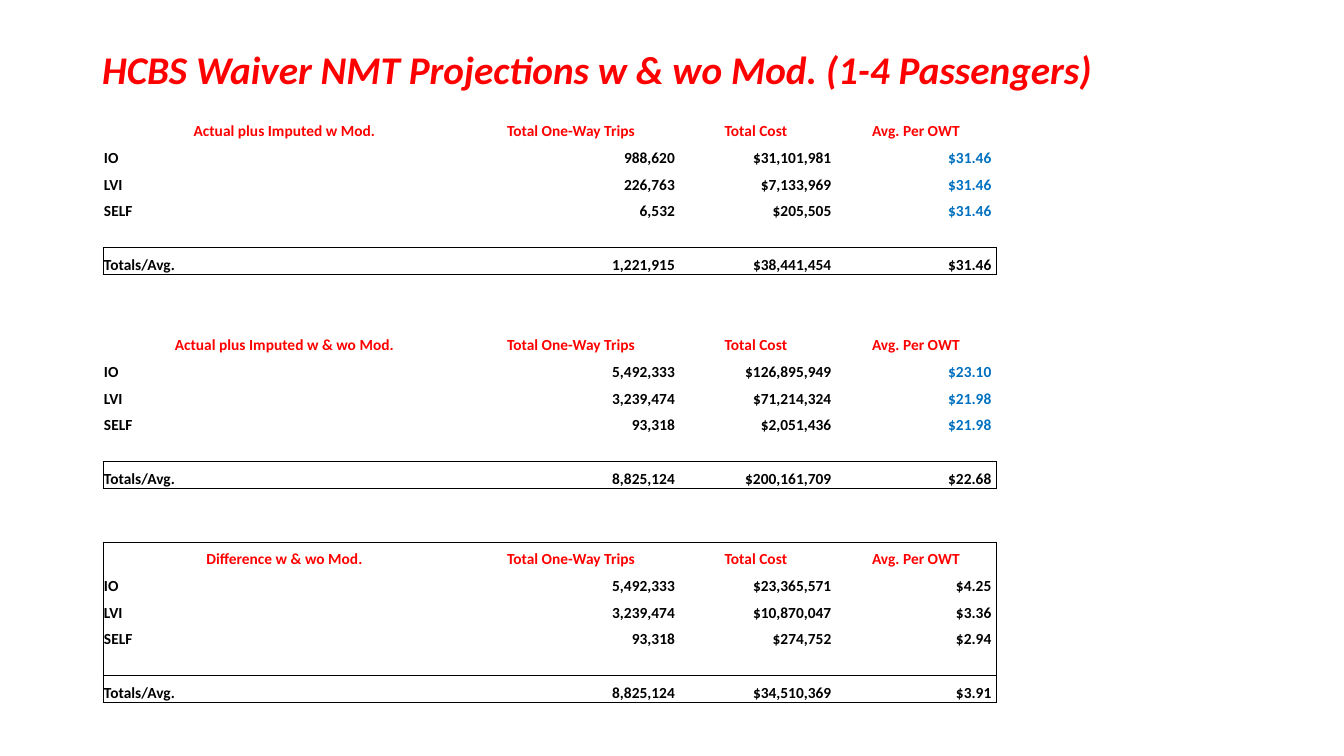
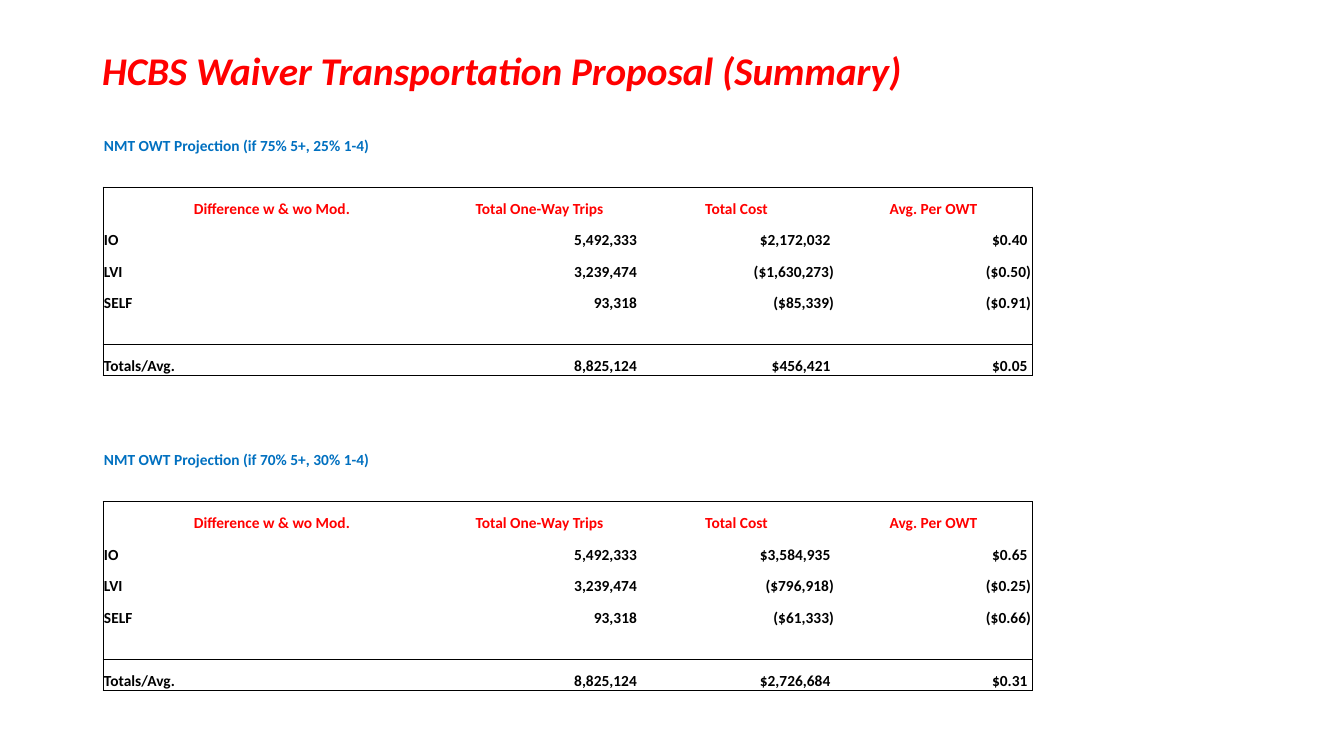
from dataclasses import dataclass

from lxml.etree import SubElement
from pptx import Presentation
from pptx.dml.color import RGBColor
from pptx.enum.text import MSO_ANCHOR as Anchor, MSO_AUTO_SIZE as AutoSize, PP_ALIGN as Align
from pptx.oxml.ns import qn
from pptx.util import Emu, Pt

# Scale and shared style
EMU_PER_INCH = 914400
PX_PER_INCH = 100.8
FONT = "Calibri"
RED = RGBColor(0xFF, 0x00, 0x00)
BLUE = RGBColor(0x00, 0x70, 0xC0)
BLACK = RGBColor(0x00, 0x00, 0x00)
TITLE_SIZE, CELL_SIZE = 28, 11
LEFT = 103
NO_GRID_STYLE = "{2D5ABB26-0587-4C30-8999-92F81FD0307C}"

COLUMN_HEADS = ("Total One-Way Trips", "Total Cost", "Avg. Per OWT")
ROW_LABELS = ("IO", "LVI", "SELF", None, "Totals/Avg.")
BLOCK_ROWS = 1 + len(ROW_LABELS)
GAP_ROWS = 2


@dataclass(frozen=True)
class Block:
    heading: str
    values: tuple  # (trips, cost, average) for each labelled row
    caption: str = ""
    boxed: bool = True
    rate_color: RGBColor = BLACK


@dataclass(frozen=True)
class Page:
    title: str
    title_height: int
    top: int
    height: int
    columns: tuple
    blocks: tuple
    lead_rows: int = 0  # caption rows above each block


DIFFERENCE = "Difference w & wo Mod."

PAGES = (
    Page("HCBS Waiver NMT Projections w & wo Mod. (1-4 Passengers)",
         64, 114, 589, (363, 210, 160, 160), (
             Block("Actual plus Imputed w Mod.", (
                 ("988,620", "$31,101,981 ", "$31.46 "),
                 ("226,763", "$7,133,969 ", "$31.46 "),
                 ("6,532", "$205,505 ", "$31.46 "),
                 ("1,221,915", "$38,441,454 ", "$31.46 ")),
                 boxed=False, rate_color=BLUE),
             Block("Actual plus Imputed w & wo Mod.", (
                 ("5,492,333", "$126,895,949 ", "$23.10 "),
                 ("3,239,474", "$71,214,324 ", "$21.98 "),
                 ("93,318", "$2,051,436 ", "$21.98 "),
                 ("8,825,124", "$200,161,709 ", "$22.68 ")),
                 boxed=False, rate_color=BLUE),
             Block(DIFFERENCE, (
                 ("5,492,333", "$23,365,571 ", "$4.25 "),
                 ("3,239,474", "$10,870,047 ", "$3.36 "),
                 ("93,318", "$274,752 ", "$2.94 "),
                 ("8,825,124", "$34,510,369 ", "$3.91 "))))),
    Page("HCBS Waiver Transportation Proposal (Summary)",
         65, 124, 567, (338, 197, 197, 197), (
             Block(DIFFERENCE, (
                 ("5,492,333", "$2,172,032 ", "$0.40 "),
                 ("3,239,474", "($1,630,273)", "($0.50)"),
                 ("93,318", "($85,339)", "($0.91)"),
                 ("8,825,124", "$456,421 ", "$0.05 ")),
                 caption="NMT OWT Projection (if 75% 5+, 25% 1-4)"),
             Block(DIFFERENCE, (
                 ("5,492,333", "$3,584,935 ", "$0.65 "),
                 ("3,239,474", "($796,918)", "($0.25)"),
                 ("93,318", "($61,333)", "($0.66)"),
                 ("8,825,124", "$2,726,684 ", "$0.31 ")),
                 caption="NMT OWT Projection (if 70% 5+, 30% 1-4)")),
         lead_rows=2),
)


def px(n: float) -> Emu:
    return Emu(round(n * EMU_PER_INCH / PX_PER_INCH))


def add_run(p, text: str, size: int, color: RGBColor, italic: bool = False) -> None:
    r = p.add_run()
    r.text = text
    r.font.name, r.font.size = FONT, Pt(size)
    r.font.bold, r.font.italic = True, italic
    r.font.color.rgb = color


def add_title(s, text: str, height: int) -> None:
    sp = s.shapes.title
    sp.left, sp.top, sp.width, sp.height = px(92), px(40), px(1159), px(height)
    tf = sp.text_frame
    tf.auto_size, tf.word_wrap = AutoSize.NONE, True
    tf.vertical_anchor = Anchor.MIDDLE
    p = tf.paragraphs[0]
    p.alignment, p.line_spacing = Align.LEFT, 0.9
    add_run(p, text, TITLE_SIZE, RED, italic=True)


def write(cell, text: str, color: RGBColor, align: Align) -> None:
    p = cell.text_frame.paragraphs[0]
    p.alignment = align
    add_run(p, text, CELL_SIZE, color)


def format_cell(cell, sides: set) -> None:
    """Set margins and borders, and keep empty cells at the text size."""
    cell.margin_left = cell.margin_right = cell.margin_top = px(1)
    cell.margin_bottom = 0
    cell.vertical_anchor = Anchor.BOTTOM
    tc_pr = cell._tc.get_or_add_tcPr()
    for side in "LRTB":
        ln = SubElement(tc_pr, qn(f"a:ln{side}"), w=str(Pt(0.5)))
        if side in sides:
            fill = SubElement(ln, qn("a:solidFill"))
            SubElement(fill, qn("a:srgbClr"), val=str(BLACK))
        else:
            SubElement(ln, qn("a:noFill"))
    cell.fill.background()
    p = cell.text_frame.paragraphs[0]
    if not p.runs:
        SubElement(p._p, qn("a:endParaRPr"), sz=str(CELL_SIZE * 100))


def frame_sides(row: int, col: int, last_col: int, frames: list) -> set:
    """Find the borders of one cell, given framed (first, last) row ranges."""
    sides = set()
    for first, last in frames:
        if first <= row <= last:
            sides |= {"L"} if col == 0 else set()
            sides |= {"R"} if col == last_col else set()
        if row in (first, last + 1):
            sides.add("T")
        if row in (first - 1, last):
            sides.add("B")
    return sides


def fill_block(table, block: Block, first: int) -> None:
    for c, head in enumerate((block.heading, *COLUMN_HEADS)):
        write(table.cell(first, c), head, RED, Align.CENTER)
    values = iter(block.values)
    for row, label in enumerate(ROW_LABELS, first + 1):
        if label is None:
            continue
        write(table.cell(row, 0), label, BLACK, Align.LEFT)
        rate_color = BLACK if label == ROW_LABELS[-1] else block.rate_color
        for c, (value, color) in enumerate(zip(next(values), (BLACK, BLACK, rate_color)), 1):
            write(table.cell(row, c), value, color, Align.RIGHT)


def add_projection_table(s, page: Page) -> None:
    stride = page.lead_rows + BLOCK_ROWS + GAP_ROWS
    n_rows, n_cols = stride * len(page.blocks) - GAP_ROWS, len(page.columns)
    table = s.shapes.add_table(n_rows, n_cols, px(LEFT), px(page.top),
                               px(sum(page.columns)), px(page.height)).table
    table.first_row = table.horz_banding = False
    table._tbl.tblPr.find(qn("a:tableStyleId")).text = NO_GRID_STYLE
    for col, width in zip(table.columns, page.columns):
        col.width = px(width)
    for row in table.rows:
        row.height = px(page.height / n_rows)

    # Text blocks and their frames
    frames = []
    for i, block in enumerate(page.blocks):
        first = i * stride + page.lead_rows
        last = first + BLOCK_ROWS - 1
        if block.caption:
            caption = table.cell(i * stride, 0)
            caption.merge(table.cell(i * stride, 1))
            write(caption, block.caption, BLUE, Align.LEFT)
        fill_block(table, block, first)
        frames.append((last, last))
        if block.boxed:
            frames.append((first, last))

    for r in range(n_rows):
        for c in range(n_cols):
            format_cell(table.cell(r, c), frame_sides(r, c, n_cols - 1, frames))


def main() -> None:
    prs = Presentation()
    prs.slide_width, prs.slide_height = px(1344), px(756)
    title_only = prs.slide_layouts[5]
    for page in PAGES:
        s = prs.slides.add_slide(title_only)
        add_title(s, page.title, page.title_height)
        add_projection_table(s, page)
    prs.save("out.pptx")


if __name__ == "__main__":
    main()
